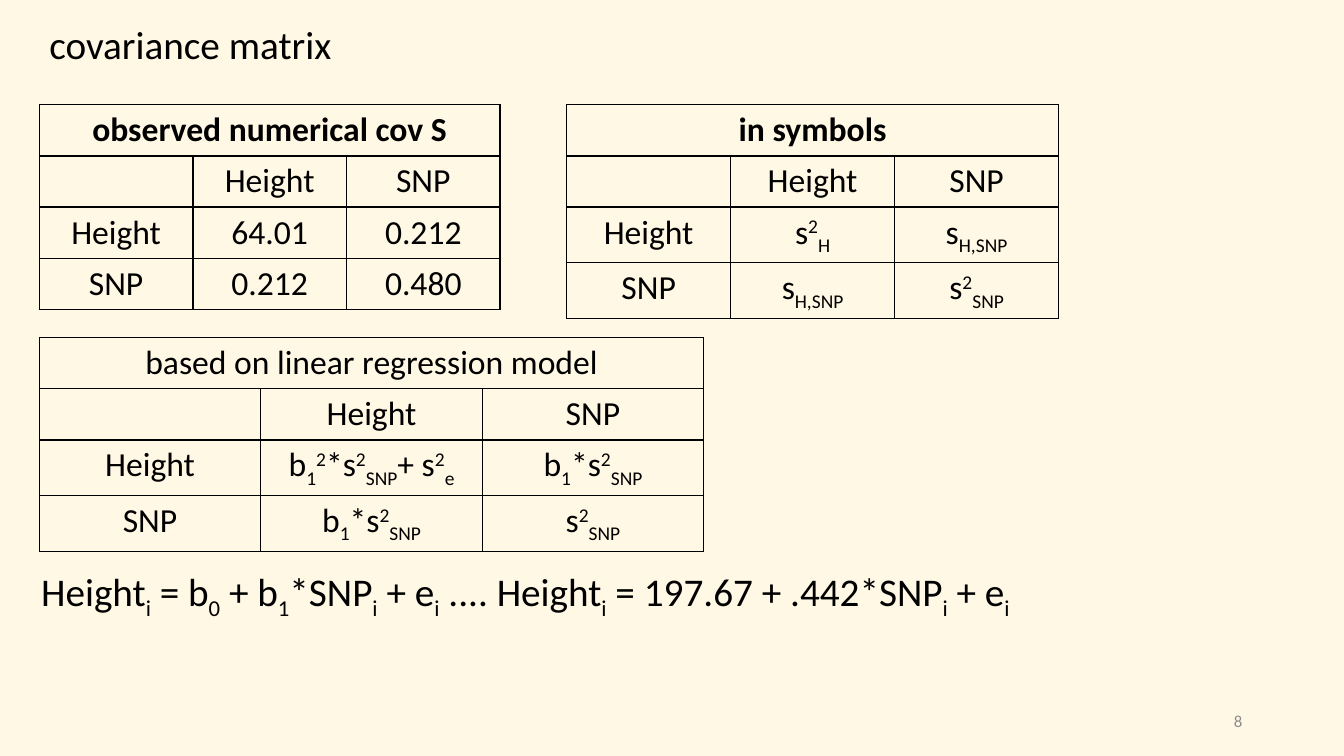
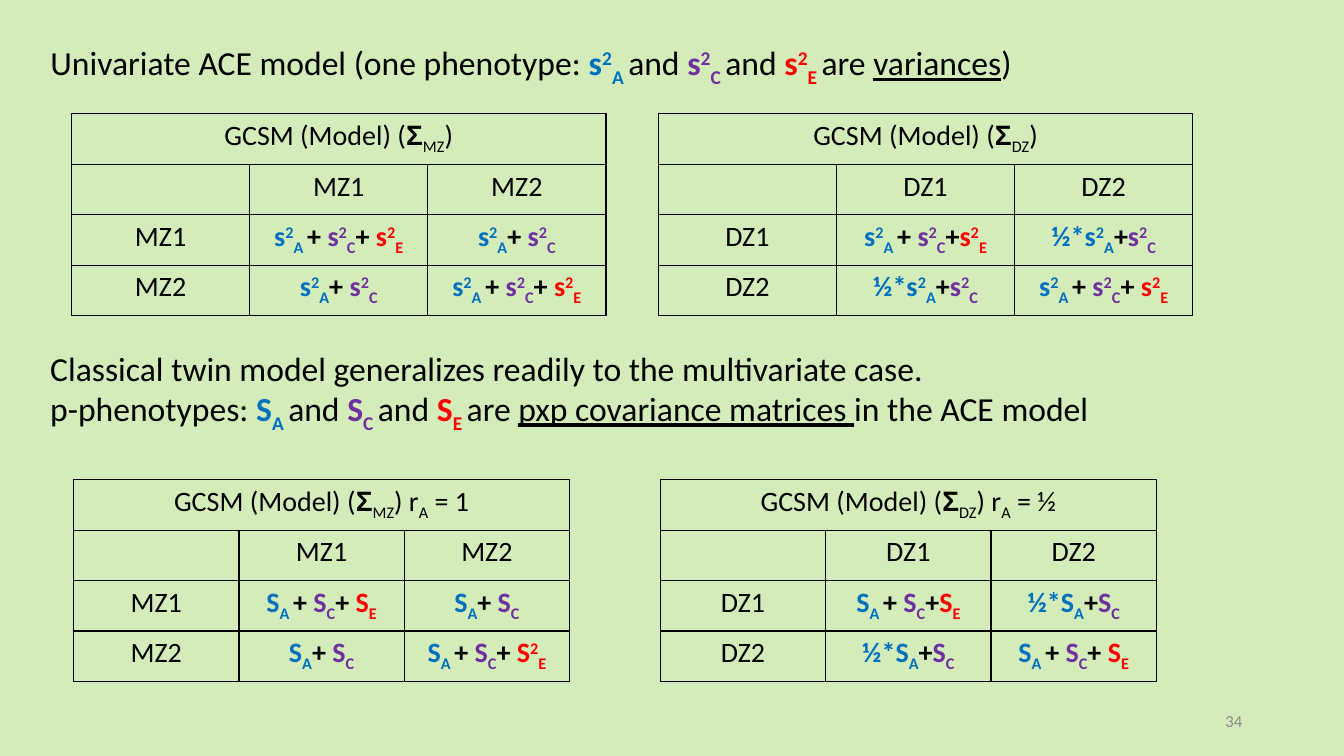
import pptx
import pptx.dml.color
import pptx.enum.text
import pptx.oxml.ns
import pptx.util
from lxml import etree

Inches = pptx.util.Inches
Pt = pptx.util.Pt
ALIGN = pptx.enum.text.PP_ALIGN
ANCHOR = pptx.enum.text.MSO_ANCHOR

COLORS = {
    "cream": "FFF8E5",
    "green": "D3ECB9",
    "ink": "000000",
    "number": "8C8C8C",
    "additive": "0070C0",
    "common": "7030A0",
    "unique": "FF0000",
}
STYLES = {
    "plain": {},
    "strong": {"bold": True},
    "underlined": {"underline": True},
    "sigma": {"bold": True, "font": "Arial"},
    "A": {"bold": True, "color": "additive"},
    "C": {"bold": True, "color": "common"},
    "E": {"bold": True, "color": "unique"},
    "number": {"color": "number"},
}
BASELINES = {"_": "-25000", "^": "30000"}


def rgb(name):
    return pptx.dml.color.RGBColor.from_string(COLORS[name])


class Deck:
    """Holds the shared style and the page being filled."""

    font = "Calibri"
    row_height = 0.5

    def __init__(self):
        self.file = pptx.Presentation()
        self.file.slide_width = Inches(13.33)
        self.file.slide_height = Inches(7.5)
        self.page = None

    def new_page(self, background, number):
        title_only = self.file.slide_layouts[5]
        self.page = self.file.slides.add_slide(title_only)
        fill = self.page.background.fill
        fill.solid()
        fill.fore_color.rgb = rgb(background)
        self.text((9.42, 6.95, 3, 0.4), [[(number, "number")]], 12,
                  ALIGN.RIGHT, ANCHOR.MIDDLE)

    def add_spans(self, para, content, size, align=ALIGN.LEFT):
        """Add markup, or (markup, style) pairs: | splits runs, _ lowers, ^ raises."""
        para.alignment = align
        pairs = [(content, "plain")] if isinstance(content, str) else content
        for markup, style_name in pairs:
            style = STYLES[style_name]
            for piece in markup.split("|"):
                baseline = BASELINES.get(piece[:1])
                span = para.add_run()
                span.text = piece[1:] if baseline else piece
                span.font.size = Pt(size)
                span.font.name = style.get("font", self.font)
                span.font.bold = style.get("bold", False)
                span.font.underline = style.get("underline", False)
                span.font.color.rgb = rgb(style.get("color", "ink"))
                if baseline:
                    span._r.get_or_add_rPr().set("baseline", baseline)

    def fill_frame(self, box, place, paragraphs, size, align, anchor):
        box.left, box.top, box.width, box.height = map(Inches, place)
        frame = box.text_frame
        frame.word_wrap = True
        frame.auto_size = pptx.enum.text.MSO_AUTO_SIZE.NONE
        frame.vertical_anchor = anchor
        for index, content in enumerate(paragraphs):
            para = frame.add_paragraph() if index else frame.paragraphs[0]
            self.add_spans(para, content, size, align)

    def title(self, place, content, size):
        self.fill_frame(self.page.shapes.title, place, [content], size,
                        ALIGN.LEFT, ANCHOR.TOP)

    def text(self, place, paragraphs, size, align=ALIGN.LEFT, anchor=ANCHOR.TOP):
        box = self.page.shapes.add_textbox(*map(Inches, place))
        self.fill_frame(box, place, paragraphs, size, align, anchor)

    def border(self, cell):
        properties = cell._tc.get_or_add_tcPr()
        qn = pptx.oxml.ns.qn
        for side in ("lnL", "lnR", "lnT", "lnB"):
            line = etree.SubElement(properties, qn("a:" + side), w=str(Pt(1)))
            solid = etree.SubElement(line, qn("a:solidFill"))
            etree.SubElement(solid, qn("a:srgbClr"), val=COLORS["ink"])

    def matrix(self, left, top, width, heading, names, values, size):
        """Draw a table with a merged heading, and names along both edges."""
        rows = [[heading], ["", *names]]
        rows += [[name, *entries] for name, entries in zip(names, values)]
        columns = len(names) + 1
        table = self.page.shapes.add_table(
            len(rows), columns, Inches(left), Inches(top), Inches(width),
            Inches(self.row_height * len(rows))).table
        table.first_row = table.horz_banding = False
        for column in table.columns:
            column.width = Inches(width / columns)
        for cell in table.iter_cells():
            self.border(cell)
            cell.fill.background()
        table.cell(0, 0).merge(table.cell(0, columns - 1))
        for row, contents in enumerate(rows):
            for column, content in enumerate(contents):
                if content:
                    para = table.cell(row, column).text_frame.paragraphs[0]
                    self.add_spans(para, content, size, ALIGN.CENTER)


def term(letter, source, gap=""):
    return (f"{letter}|_{source}{gap}", source)


def total(letter, last_sign="+ ", last_letter=None):
    return [term(letter, "A", " "), ("+ ", "strong"), term(letter, "C"),
            (last_sign, "strong"), term(last_letter or letter, "E")]


def shared(letter, share="", sign="+ "):
    return [term(share + letter, "A"), (sign, "strong"), term(letter, "C")]


def twin_heading(zygosity, ending):
    return [("GCSM (Model) (", "plain"), ("Σ", "sigma"),
            (f"_{zygosity}|){ending}", "plain")]


def sources_list(letter):
    """List the three coloured sources, joined by words."""
    parts = []
    for source, word in zip("ACE", ("and ", "and ", "are ")):
        parts += [term(letter, source, " "), (word, "plain")]
    return parts


def covariance_page(deck):
    deck.new_page("cream", "8")
    deck.title((0.39, 0.15, 6.67, 0.57), "covariance matrix", 28)
    names = ["Height", "SNP"]
    variance = "s|^2|_SNP"
    covariance = "s|_H,SNP"
    predicted = "b|_1|*" + variance
    matrices = [
        (0.39, 1.04, 4.57, [("observed numerical cov S", "strong")],
         [["64.01", "0.212"], ["0.212", "0.480"]]),
        (5.62, 1.04, 4.88, [("in symbols", "strong")],
         [["s|^2|_H", covariance], [covariance, variance]]),
        (0.39, 3.35, 6.59, "based on linear regression model",
         [["b|_1|^2|*s|^2|_SNP|+ s|^2|_e", predicted], [predicted, variance]]),
    ]
    for left, top, width, heading, values in matrices:
        deck.matrix(left, top, width, heading, names, values, 24)
    deck.text((0.31, 5.58, 11.48, 0.57), [
        "Height|_i| = b|_0| + b|_1|*SNP|_i| + e|_i"
        "| .... Height|_i| = 197.67 + .442*SNP|_i| + e|_i"], 28)


def twin_page(deck):
    deck.new_page("green", "34")
    single, multiple = "s|^2", "S"
    deck.title((0.4, 0.37, 10.5, 0.5), [
        ("Univariate ACE model (one phenotype: ", "plain"),
        *sources_list(single), ("variances", "underlined"), (")", "plain")], 24)
    deck.text((0.4, 3.4, 11.5, 0.91), [
        "Classical twin model generalizes readily to the multivariate case.",
        [("p-phenotypes: ", "plain"), *sources_list(multiple),
         ("pxp covariance matrices ", "underlined"),
         ("in the ACE model", "plain")]], 24)
    bands = [
        (single, 0.71, 1.13, 5.3, ("", ""), single),
        (multiple, 0.73, 4.76, 4.92, (" r|_A| = 1", " r|_A| = ½"), "S|^2"),
    ]
    for letter, left, top, width, endings, last_letter in bands:
        identical = shared(letter)
        fraternal = shared(letter, "½*", "+")
        values = {
            "MZ": [[total(letter), identical],
                   [identical, total(letter, last_letter=last_letter)]],
            "DZ": [[total(letter, "+"), fraternal],
                   [fraternal, total(letter)]],
        }
        for index, (zygosity, entries) in enumerate(values.items()):
            deck.matrix(left + index * 5.82, top, width,
                        twin_heading(zygosity, endings[index]),
                        [zygosity + "1", zygosity + "2"], entries, 20)


def main():
    deck = Deck()
    covariance_page(deck)
    twin_page(deck)
    deck.file.save("out.pptx")


if __name__ == "__main__":
    main()
